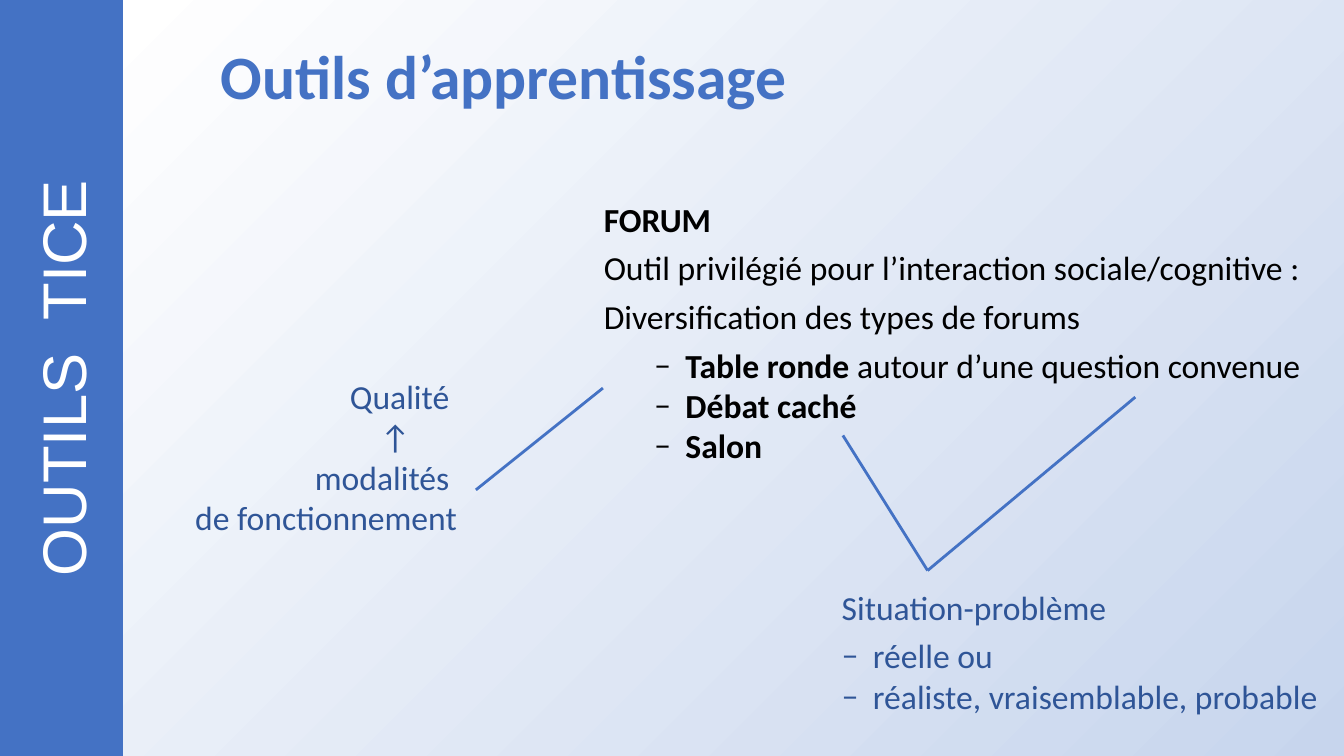
from lxml import etree
from pptx import Presentation
from pptx.dml.color import RGBColor
from pptx.enum import shapes, text
from pptx.oxml import parse_xml
from pptx.oxml.ns import nsdecls, qn
from pptx.util import Inches, Pt

BLUE, DARK_BLUE, WHITE, BLACK = "4472C4", "2F5597", "FFFFFF", "000000"
LEFT, CENTER, RIGHT = text.PP_ALIGN.LEFT, text.PP_ALIGN.CENTER, text.PP_ALIGN.RIGHT


def rgb(value):
    return RGBColor.from_string(value)


def write(tf, paragraphs, size, color, font="Calibri"):
    """Fill a frame with (runs, format) pairs; a run is (wording, bold)."""
    tf.word_wrap = True
    for i, (runs, fmt) in enumerate(paragraphs):
        p = tf.paragraphs[0] if i == 0 else tf.add_paragraph()
        p.alignment = fmt.get("align", LEFT)
        p.space_after = Pt(fmt.get("after", 0))
        p.level = fmt.get("level", 0)
        pPr = p._p.get_or_add_pPr()
        pPr.set("marL", str(Inches(fmt.get("margin", 0))))
        pPr.set("indent", str(Inches(-0.31 if "bullet" in fmt else 0)))
        if "bullet" in fmt:
            etree.SubElement(pPr, qn("a:buFont"), typeface="Calibri")
            etree.SubElement(pPr, qn("a:buChar"), char=fmt["bullet"])
        for wording, bold in runs:
            for j, line in enumerate(wording.split("\n")):
                if j:
                    p.add_line_break()
                r = p.add_run()
                r.text = line
                look = {"name": font, "size": Pt(size), "bold": bold}
                for key, value in look.items():
                    setattr(r.font, key, value)
                r.font.color.rgb = rgb(color)


prs = Presentation()
prs.slide_width, prs.slide_height = Inches(13.33), Inches(7.5)
slide = prs.slides.add_slide(prs.slide_layouts[6])

# Background panel, shaded outwards from its top left corner
panel = slide.shapes.add_shape(shapes.MSO_SHAPE.RECTANGLE, Inches(1.22), 0, Inches(12.12), Inches(7.5))
panel.shadow.inherit = False
panel.line.fill.background()
panel.fill.gradient()
old_fill = panel._element.spPr.find(qn("a:gradFill"))
old_fill.getparent().replace(old_fill, parse_xml(
    f'<a:gradFill {nsdecls("a")} rotWithShape="1"><a:gsLst>'
    f'<a:gs pos="0"><a:srgbClr val="{WHITE}"/></a:gs>'
    '<a:gs pos="100000"><a:srgbClr val="C7D5ED"/></a:gs></a:gsLst>'
    '<a:path path="circle"><a:fillToRect r="100000" b="100000"/></a:path></a:gradFill>'))

# Side banner
banner = slide.shapes.add_shape(
    shapes.MSO_SHAPE.RECTANGLE, Inches(-3.14), Inches(3.14), Inches(7.5), Inches(1.22))
banner.rotation = 270
banner.shadow.inherit = False
banner.fill.solid()
banner.fill.fore_color.rgb = rgb(BLUE)
banner.line.fill.background()
banner.text_frame.vertical_anchor = text.MSO_ANCHOR.MIDDLE
write(banner.text_frame, [([("OUTILS  TICE", False)], {"align": CENTER})], 44, WHITE, "Arial")

# Text blocks
spaced = {"after": 6}
forum_item = {"level": 1, "margin": 0.81, "bullet": "‒"}
problem_item = {"margin": 0.31, "bullet": "‒"}
forum = [
    ([("FORUM", True)], spaced),
    ([("Outil privilégié pour l’interaction sociale/cognitive :", False)], spaced),
    ([("Diversification des types de forums", False)], spaced),
    ([("Table ronde ", True), ("autour d’une question convenue", False)], forum_item),
    ([("Débat caché", True)], forum_item),
    ([("Salon", True)], forum_item),
]
title = [([("Outils d’apprentissage", True)], {"align": CENTER})]
quality = [
    ([("Qualité ", False)], {"align": RIGHT}),
    ([("↑", False)], {"align": CENTER, "margin": 1.49}),
    ([("modalités \nde fonctionnement", False)], {"align": RIGHT}),
]
problem = [
    ([("Situation-problème", False)], spaced),
    ([("réelle ou", False)], problem_item),
    ([("réaliste, vraisemblable, probable", False)], problem_item),
]
blocks = [
    ((5.89, 1.92, 7.16, 2.78), forum, 24, BLACK),
    ((0.5, 0.33, 9, 1.25), title, 44, BLUE),
    ((1.72, 3.68, 2.91, 1.72), quality, 24, DARK_BLUE),
    ((8.25, 5.77, 5.08, 1.4), problem, 24, DARK_BLUE),
]
for box, paragraphs, size, color in blocks:
    sp = slide.shapes.add_textbox(*map(Inches, box))
    write(sp.text_frame, paragraphs, size, color)

# Lines linking the forum types to the remarks
problem_top = (9.2, 5.66)
links = [(problem_top, (11.26, 3.94)), ((4.72, 4.86), (5.98, 3.85)), (problem_top, (8.36, 4.32))]
for start, end in links:
    link = slide.shapes.add_connector(shapes.MSO_CONNECTOR.STRAIGHT, *map(Inches, start + end))
    link.line.color.rgb = rgb(BLUE)
    link.line.width = Pt(2)
    etree.SubElement(link._element.spPr, qn("a:effectLst"))

prs.save("out.pptx")
